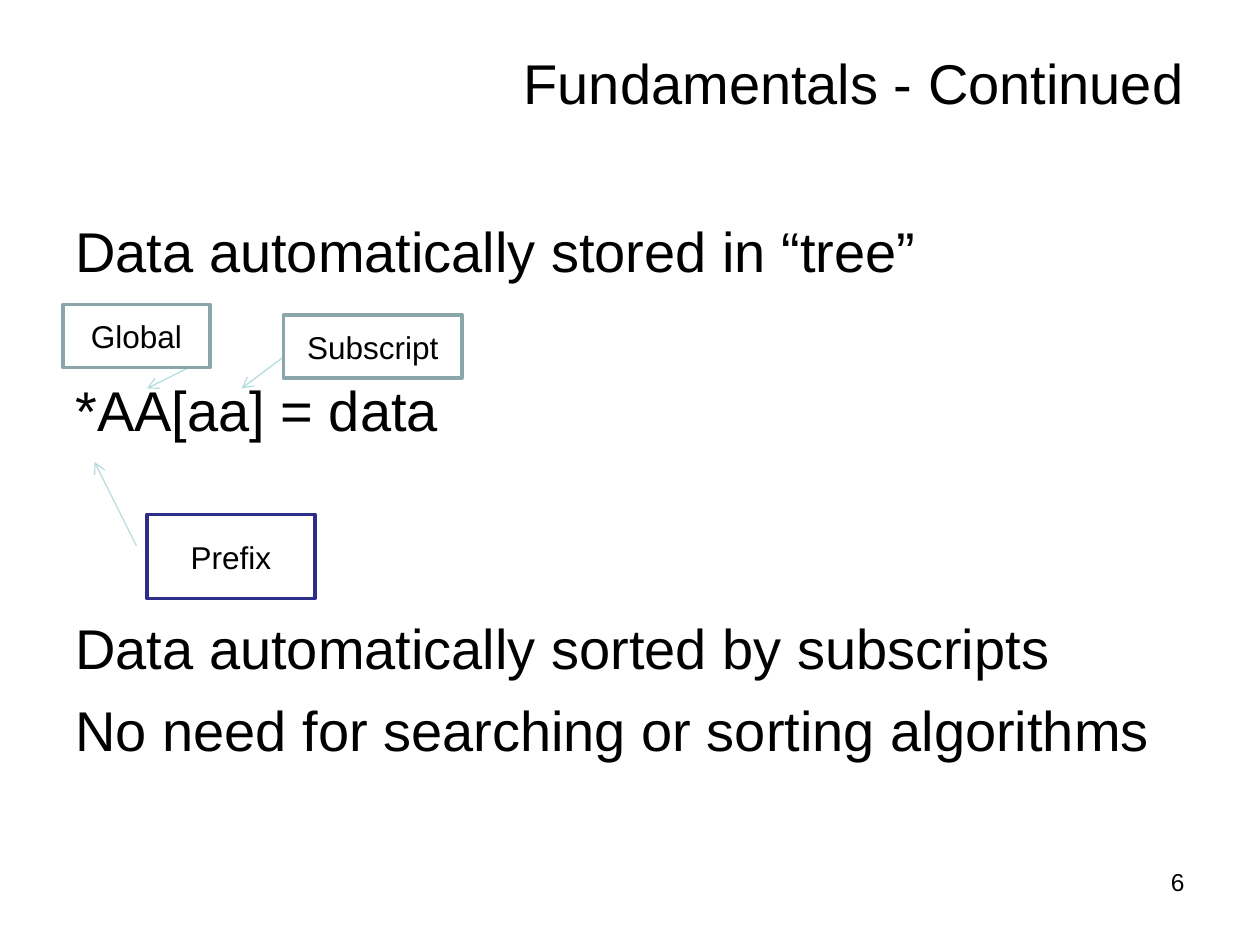
from lxml import etree
from pptx import Presentation
from pptx.dml.color import RGBColor
from pptx.enum import shapes, text
from pptx.oxml import ns
from pptx.util import Pt

ALIGN = text.PP_ALIGN
ANCHOR = text.MSO_ANCHOR


def color(value):
    """Turn a hex string into a colour."""
    return RGBColor.from_string(value)


def points(*values):
    """Turn numbers into lengths in points."""
    return [Pt(v) for v in values]


def place(sp, box):
    """Move a shape to a box of left, top, width and height."""
    sp.left, sp.top, sp.width, sp.height = points(*box)


def write(tf, lines, size, align=ALIGN.LEFT, anchor=ANCHOR.TOP):
    """Write lines, each a pair of wording and space before."""
    frame = {"word_wrap": True, "auto_size": text.MSO_AUTO_SIZE.NONE,
             "vertical_anchor": anchor}
    for name, value in frame.items():
        setattr(tf, name, value)
    for i, (words, before) in enumerate(lines):
        p = tf.add_paragraph() if i else tf.paragraphs[0]
        p.alignment = align
        if before:
            p.space_before = Pt(before)
        r = p.add_run()
        r.text = words
        for name, value in {"name": "Arial", "size": Pt(size)}.items():
            setattr(r.font, name, value)
        r.font.color.rgb = color("000000")


def add_title(s, box, words):
    """Place and fill the title placeholder."""
    place(s.shapes.title, box)
    write(s.shapes.title.text_frame, [(words, 0)], 32, ALIGN.RIGHT, ANCHOR.MIDDLE)


def add_text(s, box, lines, size, align=ALIGN.LEFT):
    """Add a text box."""
    sp = s.shapes.add_textbox(*points(*box))
    write(sp.text_frame, lines, size, align)


def add_arrow(s, start, end):
    """Add a thin line with an open arrowhead at its end."""
    line = s.shapes.add_connector(shapes.MSO_CONNECTOR.STRAIGHT,
                                  *points(*start, *end))
    line.line.color.rgb = color("B6DCDF")
    line.line.width = Pt(0.75)
    etree.SubElement(line.line._get_or_add_ln(), ns.qn("a:tailEnd"), type="arrow")
    etree.SubElement(line._element.spPr, ns.qn("a:effectLst"))


def add_callout(s, box, words, outline, start, end):
    """Add a label box and its arrow, given from the box's top left corner."""
    left, top = box[:2]
    add_arrow(s, *[(left + x, top + y) for x, y in (start, end)])
    sp = s.shapes.add_shape(shapes.MSO_SHAPE.RECTANGLE, *points(*box))
    sp.shadow.inherit = False
    sp.fill.solid()
    sp.fill.fore_color.rgb = color("FFFFFF")
    sp.line.color.rgb = color(outline)
    sp.line.width = Pt(2)
    write(sp.text_frame, [(words, 0)], 18, ALIGN.CENTER, ANCHOR.MIDDLE)


def main():
    """Build the slide and save it."""
    prs = Presentation()
    prs.slide_width, prs.slide_height = points(720, 540)
    s = prs.slides.add_slide(prs.slide_layouts[5])
    gap, pitch = 8, 44.8
    add_title(s, (36, 21.6, 648, 50.4), "Fundamentals - Continued")
    add_text(s, (36, 120, 648, 356.4), [
        ("Data automatically stored in “tree”", 0),
        ("*AA[aa] = data", gap + pitch),
        ("Data automatically sorted by subscripts", gap + 2 * pitch),
        ("No need for searching or sorting algorithms", gap),
    ], 32)
    add_text(s, (516, 492, 168, 37.2), [("6", 0)], 14, ALIGN.RIGHT)
    callouts = [
        ((84, 294, 96, 48), "Prefix", "2D2D8A", (-6, 18), (-30, -30)),
        ((36, 174, 84, 36), "Global", "8AA6A8", (84, 30), (48, 48)),
        ((162, 180, 102, 36), "Subscript", "8AA6A8", (0, 24), (-24, 42)),
    ]
    for callout in callouts:
        add_callout(s, *callout)
    prs.save("out.pptx")


if __name__ == "__main__":
    main()
